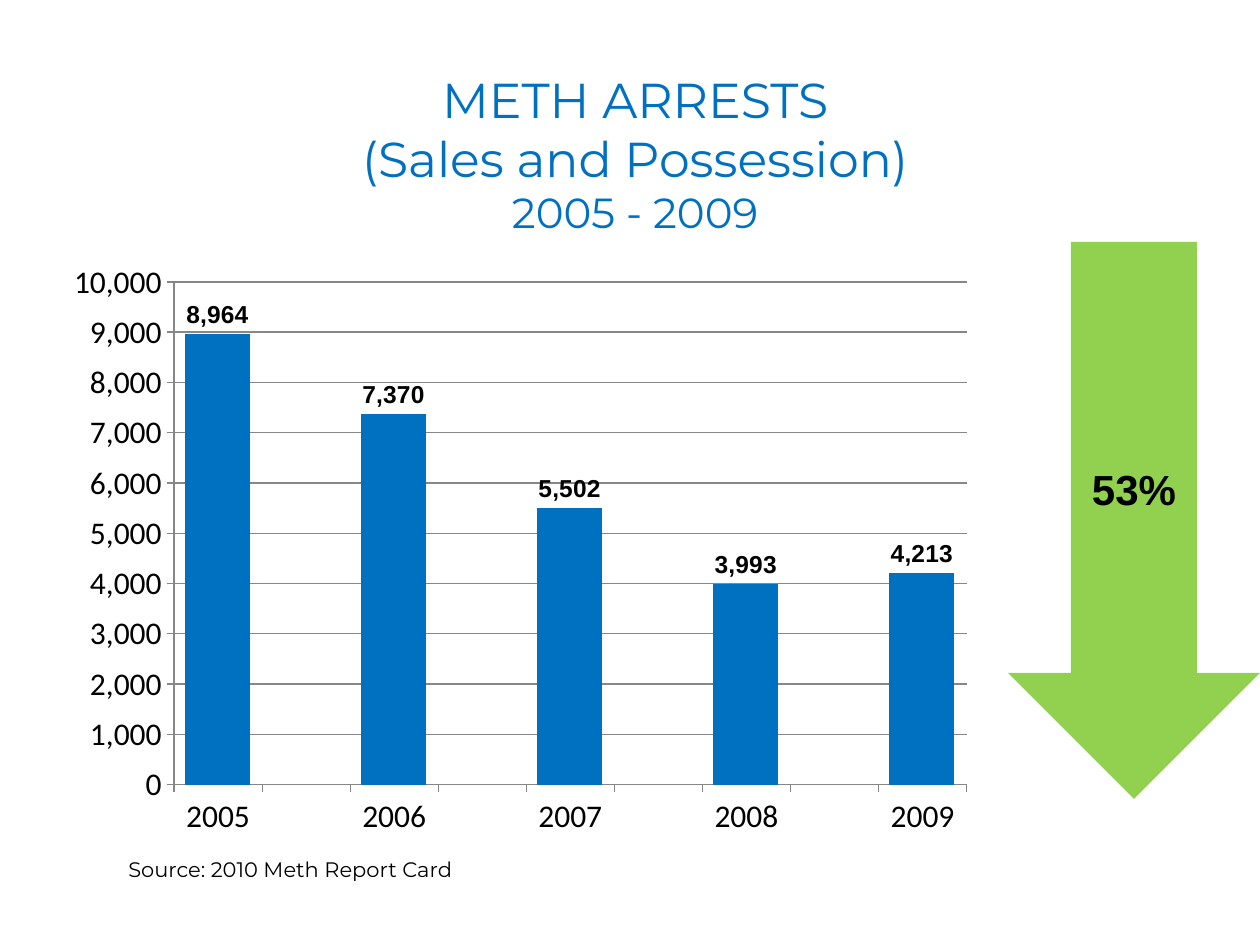
from dataclasses import dataclass

from pptx import Presentation
from pptx.chart.data import CategoryChartData
from pptx.dml.color import RGBColor
from pptx.enum.chart import XL_CHART_TYPE as CHART, XL_LABEL_POSITION as LABEL, XL_TICK_MARK as TICK
from pptx.enum.shapes import MSO_SHAPE as SHAPE
from pptx.enum.text import MSO_ANCHOR as ANCHOR, MSO_AUTO_SIZE as AUTO, PP_ALIGN as ALIGN
from pptx.oxml import parse_xml
from pptx.oxml.ns import nsdecls, qn
from pptx.util import Inches, Pt


@dataclass(frozen=True)
class Theme:
    blue: str = "0070C0"
    red: str = "FF0000"
    olive: str = "9BBB59"
    green: str = "92D050"
    black: str = "000000"
    grid: str = "878787"
    heading: str = "Montserrat"
    axis: str = "Calibri"
    label: str = "Arial"
    title_size: int = 28
    period_size: int = 24
    arrow_size: int = 24
    axis_size: int = 18
    label_size: int = 14
    source_size: int = 12


THEME = Theme()
ARRESTS = {"2005": 8964, "2006": 7370, "2007": 5502, "2008": 3993, "2009": 4213}


def rgb(value):
    return RGBColor.from_string(value)


def set_font(font, name, size, color, bold=False):
    for attr, value in {"name": name, "size": Pt(size), "bold": bold}.items():
        setattr(font, attr, value)
    font.color.rgb = rgb(color)


def write_lines(tf, lines, font, color, align, bold=False):
    for i, (text, size) in enumerate(lines):
        p = tf.paragraphs[0] if i == 0 else tf.add_paragraph()
        p.alignment = align
        r = p.add_run()
        r.text = text
        set_font(r.font, font, size, color, bold)


def add_text(s, box, lines, color, align=ALIGN.LEFT, wrap=True):
    tf = s.shapes.add_textbox(*map(Inches, box)).text_frame
    for attr, value in {"word_wrap": wrap, "auto_size": AUTO.SHAPE_TO_FIT_TEXT}.items():
        setattr(tf, attr, value)
    write_lines(tf, lines, THEME.heading, color, align)


def add_down_arrow(s, box, text):
    sp = s.shapes.add_shape(SHAPE.DOWN_ARROW, *map(Inches, box))
    sp.shadow.inherit = False
    sp.fill.solid()
    sp.fill.fore_color.rgb = rgb(THEME.green)
    sp.line.fill.background()
    tf = sp.text_frame
    tf.vertical_anchor = ANCHOR.MIDDLE
    write_lines(tf, [(text, THEME.arrow_size)], THEME.label, THEME.black, ALIGN.CENTER, True)


def set_plot_layout(chart, x, y, w, h):
    area = chart.plots[0]._element.getparent()
    for old in area.findall(qn("c:layout")):
        area.remove(old)
    sizes = "".join(f'<c:{k} val="{v}"/>' for k, v in zip("xywh", (x, y, w, h)))
    area.insert(0, parse_xml(
        f'<c:layout {nsdecls("c")}><c:manualLayout><c:layoutTarget val="inner"/>'
        f'<c:xMode val="edge"/><c:yMode val="edge"/>{sizes}</c:manualLayout></c:layout>'))


def arrests_data():
    # A blank category separates each pair of years
    years = list(ARRESTS)
    cats = [cat for year in years for cat in (year, "")][:-1]
    data = CategoryChartData(number_format="#,##0")
    data.categories = cats
    data.add_series("Series 1", [ARRESTS.get(cat) for cat in cats])
    for name in ("Series 2", "Series 3"):
        data.add_series(name, [None] * len(cats))
    return data


def add_column_chart(s, box):
    chart = s.shapes.add_chart(CHART.COLUMN_CLUSTERED, *map(Inches, box), arrests_data()).chart
    chart.has_legend = chart.has_title = False
    set_font(chart.font, THEME.axis, THEME.axis_size, THEME.black)
    set_plot_layout(chart, 0.13, 0.05, 0.85, 0.84)

    # Axes and grid
    val = chart.value_axis
    scale = {"minimum_scale": 0, "maximum_scale": 10000, "major_unit": 1000,
             "has_major_gridlines": True}
    for attr, value in scale.items():
        setattr(val, attr, value)
    val.tick_labels.number_format = "#,##0"
    val.tick_labels.number_format_is_linked = False
    for axis in (val, chart.category_axis):
        axis.major_tick_mark = TICK.OUTSIDE
    for item in (val, chart.category_axis, val.major_gridlines):
        item.format.line.color.rgb = rgb(THEME.grid)
        item.format.line.width = Pt(0.75)

    # Columns
    plot = chart.plots[0]
    for attr, value in {"gap_width": 34, "overlap": 99, "vary_by_categories": False}.items():
        setattr(plot, attr, value)
    for series, color in zip(plot.series, (THEME.blue, THEME.red, THEME.olive)):
        series.format.fill.solid()
        series.format.fill.fore_color.rgb = rgb(color)

    # Value labels
    labels = plot.series[0].data_labels
    formats = {"show_value": True, "position": LABEL.OUTSIDE_END,
               "number_format": "#,##0", "number_format_is_linked": False}
    for attr, value in formats.items():
        setattr(labels, attr, value)
    set_font(labels.font, THEME.label, THEME.label_size, THEME.black, True)


def main():
    prs = Presentation()
    prs.slide_width, prs.slide_height = Inches(10), Inches(7.5)
    s = prs.slides.add_slide(prs.slide_layouts[6])

    # Chart
    add_column_chart(s, (0.42, 2, 7.4, 4.75))

    # Title and source
    title = [("METH ARRESTS", THEME.title_size),
             ("(Sales and Possession)", THEME.title_size),
             ("2005 - 2009", THEME.period_size)]
    add_text(s, (0.83, 0.5, 8.42, 1.45), title, THEME.blue, ALIGN.CENTER)
    source = [("Source: 2010 Meth Report Card", THEME.source_size)]
    add_text(s, (0.92, 6.75, 3.2, 0.3), source, THEME.black, wrap=False)

    # Overall decline
    add_down_arrow(s, (8, 1.92, 2, 4.42), "53%")

    prs.save("out.pptx")


if __name__ == "__main__":
    main()
